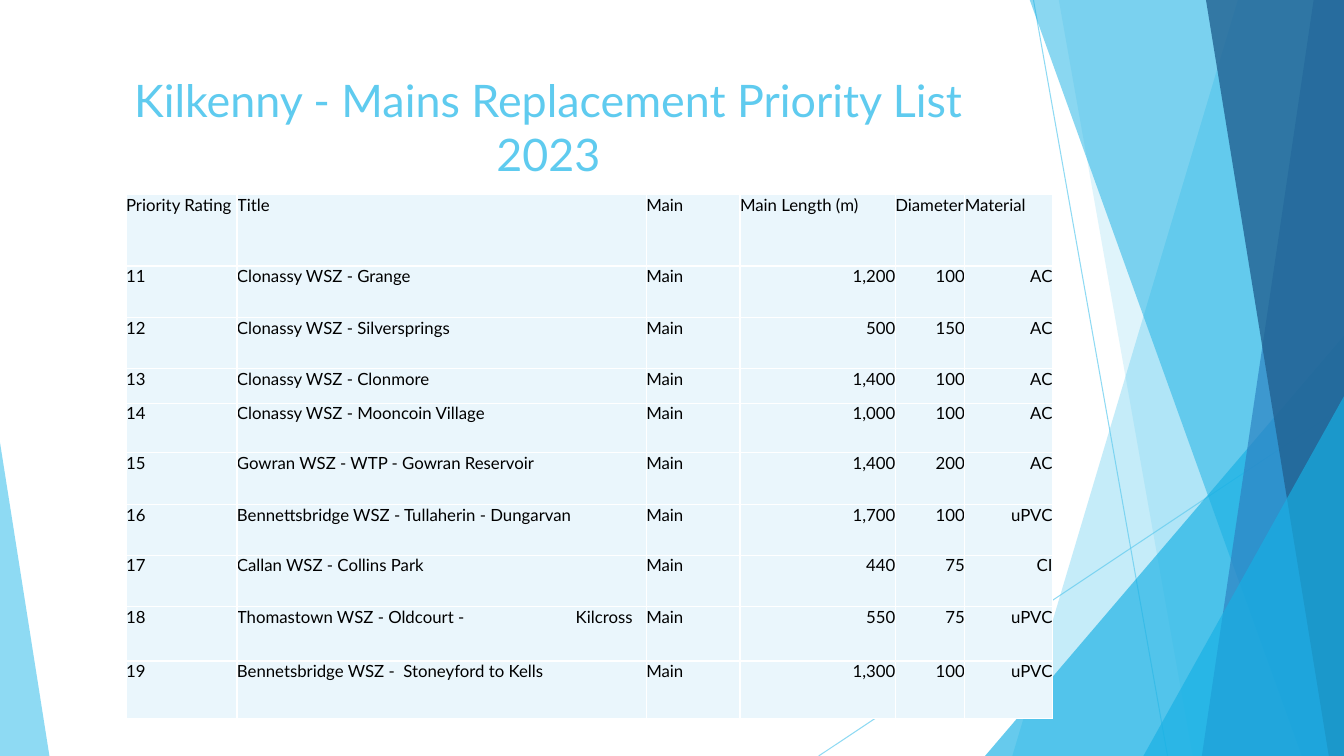
from dataclasses import dataclass

from pptx import Presentation
from pptx.dml.color import RGBColor
from pptx.enum.shapes import MSO_CONNECTOR as CONN, MSO_SHAPE as SHAPE
from pptx.enum.text import MSO_ANCHOR as ANCHOR, PP_ALIGN as ALIGN
from pptx.oxml import parse_xml
from pptx.oxml.ns import nsdecls, qn
from pptx.oxml.xmlchemy import OxmlElement
from pptx.slide import Slide
from pptx.util import Inches, Pt

WIDTH, HEIGHT = 13.33, 7.5
COLUMNS = [1.1, 4.06, 0.93, 1.54, 0.69, 0.87]
ROWS = [0.71, 0.51, 0.51, 0.34, 0.49, 0.52, 0.5, 0.51, 0.54, 0.57]
HEADER = ["Priority Rating", "Title", "Main", "Main Length (m)", "Diameter", "Material"]
MAINS = [
    ("Clonassy WSZ - Grange", "1,200", "100", "AC"),
    ("Clonassy WSZ - Silversprings", "500", "150", "AC"),
    ("Clonassy WSZ - Clonmore", "1,400", "100", "AC"),
    ("Clonassy WSZ - Mooncoin Village", "1,000", "100", "AC"),
    ("Gowran WSZ - WTP - Gowran Reservoir", "1,400", "200", "AC"),
    ("Bennettsbridge WSZ - Tullaherin - Dungarvan", "1,700", "100", "uPVC"),
    ("Callan WSZ - Collins Park", "440", "75", "CI"),
    ("Thomastown WSZ - Oldcourt -\tKilcross", "550", "75", "uPVC"),
    ("Bennetsbridge WSZ -  Stoneyford to Kells", "1,300", "100", "uPVC"),
]


def rgb(color):
    return RGBColor.from_string(color)


@dataclass
class Deck:
    """Holds the style and the current slide, and draws each kind of element."""

    s: Slide
    font: str = "Lato"
    accent: str = "5FCBEF"
    bright: str = "17B0E4"
    cell_fill: str = "EAF6FC"
    border: str = "FFFFFF"
    ink: str = "000000"

    def set_alpha(self, shape, percent):
        for clr in shape._element.spPr.iter(qn("a:srgbClr")):
            alpha = OxmlElement("a:alpha")
            alpha.set("val", str(percent * 1000))
            clr.append(alpha)

    def paint(self, sp, color, alpha):
        sp.shadow.inherit = False
        sp.fill.solid()
        sp.fill.fore_color.rgb = rgb(color)
        sp.line.fill.background()
        self.set_alpha(sp, alpha)

    def line(self, x1, y1, x2, y2):
        ln = self.s.shapes.add_connector(
            CONN.STRAIGHT, Inches(x1), Inches(y1), Inches(x2), Inches(y2))
        ln.line.color.rgb = rgb(self.accent)
        ln.line.width = Pt(0.75)
        self.set_alpha(ln, 70)
        ln._element.spPr.append(OxmlElement("a:effectLst"))

    def band(self, top_x, bottom_x, color, alpha):
        top = Inches(-0.01)
        right, bottom = Inches(WIDTH), Inches(HEIGHT)
        builder = self.s.shapes.build_freeform(Inches(top_x), top)
        builder.add_line_segments([(right, top), (right, bottom), (Inches(bottom_x), bottom)])
        self.paint(builder.convert_to_shape(), color, alpha)

    def triangle(self, x, y, w, apex, color, alpha):
        sp = self.s.shapes.add_shape(
            SHAPE.ISOSCELES_TRIANGLE, Inches(x), Inches(y), Inches(w), Inches(HEIGHT - y))
        sp.adjustments[0] = apex
        self.paint(sp, color, alpha)

    def set_text(self, tf, text, size, color, align):
        tf.text = text
        p = tf.paragraphs[0]
        p.alignment = align
        for r in p.runs:
            r.font.name, r.font.size = self.font, Pt(size)
            r.font.color.rgb = rgb(color)
        return p

    def title(self, text, x, y, w, h):
        tf = self.s.shapes.add_textbox(Inches(x), Inches(y), Inches(w), Inches(h)).text_frame
        tf.word_wrap = True
        tf.vertical_anchor = ANCHOR.TOP
        self.set_text(tf, text, 32, self.accent, ALIGN.CENTER)

    def cell(self, cell, text, align):
        cell.margin_left = cell.margin_right = cell.margin_top = cell.margin_bottom = 0
        cell.fill.solid()
        cell.fill.fore_color.rgb = rgb(self.cell_fill)
        p = self.set_text(cell.text_frame, text, 12, self.ink, align)
        if "\t" in text:
            p._p.get_or_add_pPr().append(parse_xml(
                f'<a:tabLst {nsdecls("a")}><a:tab pos="{Inches(3.36)}" algn="l"/></a:tabLst>'))
        tcPr = cell._tc.get_or_add_tcPr()
        for i, side in enumerate("LRTB"):
            tcPr.insert(i, parse_xml(
                f'<a:ln{side} {nsdecls("a")} w="{Pt(1)}"><a:solidFill>'
                f'<a:srgbClr val="{self.border}"/></a:solidFill></a:ln{side}>'))

    def table(self, rows, x, y):
        table = self.s.shapes.add_table(
            len(rows), len(COLUMNS), Inches(x), Inches(y),
            Inches(sum(COLUMNS)), Inches(sum(ROWS))).table
        table.first_row = table.horz_banding = False
        for col, width in zip(table.columns, COLUMNS):
            col.width = Inches(width)
        for row, height in zip(table.rows, ROWS):
            row.height = Inches(height)
        for i, values in enumerate(rows):
            for j, text in enumerate(values):
                align = ALIGN.RIGHT if i > 0 and j > 2 else ALIGN.LEFT
                self.cell(table.cell(i, j), text, align)


def main():
    prs = Presentation()
    prs.slide_width, prs.slide_height = Inches(WIDTH), Inches(HEIGHT)
    deck = Deck(prs.slides.add_slide(prs.slide_layouts[6]))

    deck.line(10.25, 0, 11.58, HEIGHT)
    deck.line(WIDTH, 4.03, 8.12, HEIGHT)
    deck.band(12.28, 10.04, deck.accent, 36)
    deck.band(10.5, 11.83, deck.accent, 20)
    deck.triangle(9.77, 3.33, 3.56, 1, deck.bright, 66)
    deck.band(10.21, 12.91, deck.bright, 50)
    deck.band(13.03, 11.92, "2E83C3", 70)
    deck.band(11.96, 13.18, "226292", 80)
    deck.triangle(11.34, 3.93, 1.99, 1, deck.bright, 66)
    deck.triangle(0, 4.39, 0.49, 0, deck.accent, 70)

    deck.title("Kilkenny - Mains Replacement Priority List 2023", 0.74, 0.67, 9.4, 1.44)
    rows = [(str(rating), name, "Main", *details)
            for rating, (name, *details) in enumerate(MAINS, 11)]
    deck.table([HEADER, *rows], 1.25, 1.93)
    prs.save("out.pptx")


if __name__ == "__main__":
    main()
